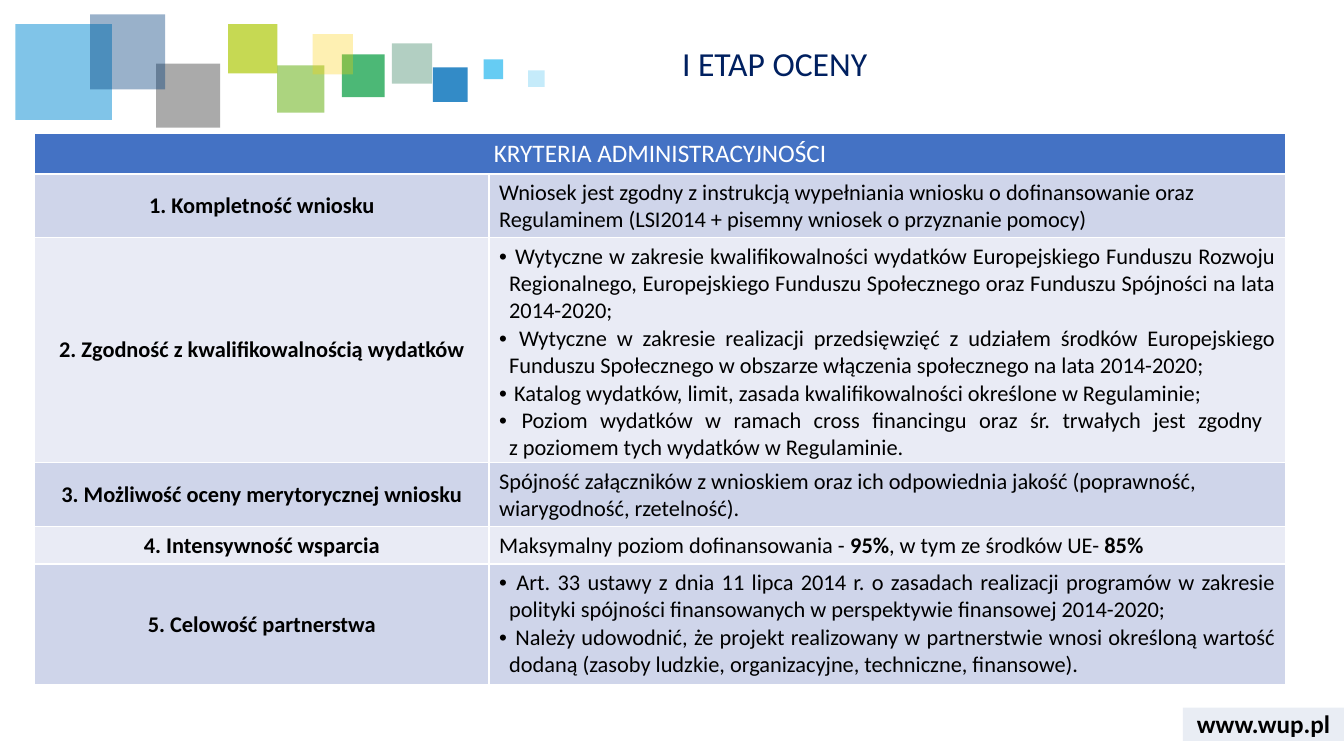
from lxml import etree
from pptx import Presentation
from pptx import util as u
from pptx.dml.color import RGBColor
from pptx.enum import shapes, text
from pptx.oxml import ns

WHITE = RGBColor(0xFF, 0xFF, 0xFF)
BLACK = RGBColor(0, 0, 0)
NAVY = RGBColor(0x00, 0x20, 0x60)
HEADER_BLUE = RGBColor(0x44, 0x72, 0xC4)
BANDS = [RGBColor(0xCF, 0xD5, 0xEA), RGBColor(0xE9, 0xEB, 0xF5)]
ADDRESS_BLUE = RGBColor(0x2F, 0x55, 0x97)
GREEN_DARK = RGBColor(0x00, 0x61, 0x38)
BLUE = RGBColor(0x00, 0x6E, 0xB9)
GREEN = RGBColor(0x00, 0x9A, 0x3C)
BLUE_BRIGHT = RGBColor(0x02, 0x8B, 0xD3)
GREEN_LIGHT = RGBColor(0x75, 0xB8, 0x2A)
GRAY = RGBColor(0x57, 0x57, 0x57)
BLUE_DARK = RGBColor(0x00, 0x3D, 0x7C)
SKY = RGBColor(0x40, 0xC0, 0xF1)
LIME = RGBColor(0xAF, 0xCA, 0x0B)
YELLOW = RGBColor(0xFE, 0xD0, 0x00)

presentation = Presentation()
presentation.slide_width = u.Pt(960)
presentation.slide_height = u.Pt(540)
slide = presentation.slides.add_slide(presentation.slide_layouts[5])


def add_tile(left, top, width, height, color, opacity):
    """Add a borderless rectangle with the given opacity in percent."""
    shape = slide.shapes.add_shape(shapes.MSO_SHAPE.RECTANGLE, u.Pt(left), u.Pt(top),
                                   u.Pt(width), u.Pt(height))
    shape.shadow.inherit = False
    shape.line.fill.background()
    shape.fill.solid()
    shape.fill.fore_color.rgb = color
    color_element = shape._element.spPr.find(".//" + ns.qn("a:srgbClr"))
    etree.SubElement(color_element, ns.qn("a:alpha"), val=str(opacity * 1000))


def format_runs(paragraph, size, color, bold=False):
    for run in paragraph.runs:
        run.font.name = "Calibri"
        run.font.size = u.Pt(size)
        run.font.color.rgb = color
        run.font.bold = bold


# Decorative squares: left, top, width, height, colour, opacity
tiles = [
    (280, 31, 28.8, 28.8, GREEN_DARK, 30),
    (309.3, 48.2, 24.7, 24.7, BLUE, 80),
    (244.3, 38.9, 30.5, 30.5, GREEN, 70),
    (11, 17.2, 69, 68.5, BLUE_BRIGHT, 50),
    (198, 46.8, 33.8, 33.8, GREEN_LIGHT, 60),
    (111.6, 45.4, 45.6, 45.8, GRAY, 50),
    (64.4, 10.2, 53.6, 53.6, BLUE_DARK, 40),
    (345.4, 42.4, 14, 14.2, SKY, 80),
    (163, 17.2, 35.2, 35.2, LIME, 70),
    (223.4, 24.4, 28.8, 28.8, YELLOW, 30),
    (377.3, 50.3, 11.8, 11.8, SKY, 30),
]
for tile in tiles:
    add_tile(*tile)

# Web address in the corner
add_tile(845, 505.4, 115, 23.8, ADDRESS_BLUE, 10)
address = slide.shapes.add_textbox(u.Pt(845), u.Pt(502), u.Pt(115), u.Pt(29))
address.text_frame.word_wrap = True
address.text_frame.vertical_anchor = text.MSO_ANCHOR.MIDDLE
address.text_frame.text = "www.wup.pl"
address_paragraph = address.text_frame.paragraphs[0]
address_paragraph.alignment = text.PP_ALIGN.CENTER
format_runs(address_paragraph, 18, BLACK, True)

# Title
title = slide.shapes.title
title.left, title.top, title.width, title.height = u.Pt(480), u.Pt(30.2), u.Pt(458), u.Pt(39.6)
title.text_frame.text = "I ETAP OCENY"
title.text_frame.vertical_anchor = text.MSO_ANCHOR.TOP
title_paragraph = title.text_frame.paragraphs[0]
title_paragraph.alignment = text.PP_ALIGN.LEFT
title_paragraph.line_spacing = 0.9
format_runs(title_paragraph, 24, NAVY)

# Criteria: name, row height, alignment, bulleted, paragraphs as lists of runs
# (every second run is bold)
LEFT, JUSTIFY = text.PP_ALIGN.LEFT, text.PP_ALIGN.JUSTIFY
criteria = [
    ("1. Kompletność wniosku", 45.6, LEFT, False, [
        ["Wniosek jest zgodny z instrukcją wypełniania wniosku o dofinansowanie "
         "oraz Regulaminem (LSI2014 + pisemny wniosek o przyznanie pomocy)"]]),
    ("2. Zgodność z kwalifikowalnością wydatków", 160.6, JUSTIFY, True, [
        [" Wytyczne w zakresie kwalifikowalności wydatków Europejskiego Funduszu Rozwoju "
         "Regionalnego, Europejskiego Funduszu Społecznego oraz Funduszu Spójności "
         "na lata 2014-2020;"],
        [" Wytyczne w zakresie realizacji przedsięwzięć z udziałem środków Europejskiego "
         "Funduszu Społecznego w obszarze włączenia społecznego na lata 2014-2020;"],
        [" Katalog wydatków, limit, zasada kwalifikowalności określone w Regulaminie;"],
        [" Poziom wydatków w ramach cross financingu oraz śr. trwałych jest zgodny "
         "\vz poziomem tych wydatków w Regulaminie."]]),
    ("3. Możliwość oceny merytorycznej wniosku", 45.6, LEFT, False, [
        ["Spójność załączników z wnioskiem oraz ich odpowiednia jakość "
         "(poprawność, wiarygodność, rzetelność)."]]),
    ("4. Intensywność wsparcia", 26.6, JUSTIFY, False, [
        ["Maksymalny poziom dofinansowania - ", "95%", ", w tym ze środków UE- ", "85%"]]),
    ("5. Celowość partnerstwa", 86.4, JUSTIFY, True, [
        [" Art. 33 ustawy z dnia 11 lipca 2014 r. o zasadach realizacji programów w zakresie "
         "polityki spójności finansowanych w perspektywie finansowej 2014-2020;"],
        [" Należy udowodnić, że projekt realizowany w partnerstwie wnosi określoną wartość "
         "dodaną (zasoby ludzkie, organizacyjne, techniczne, finansowe)."]]),
]

# Table with a merged header
table = slide.shapes.add_table(len(criteria) + 1, 2, u.Pt(24.8), u.Pt(95.4),
                               u.Pt(893.5), u.Pt(393.6)).table
table.columns[0].width, table.columns[1].width = u.Pt(324.5), u.Pt(569)
table.rows[0].height = u.Pt(28.8)
header = table.cell(0, 0)
header.merge(table.cell(0, 1))
header.text_frame.text = "KRYTERIA ADMINISTRACYJNOŚCI"
header.text_frame.paragraphs[0].alignment = text.PP_ALIGN.CENTER
format_runs(header.text_frame.paragraphs[0], 18, WHITE)
for cell in table.rows[0].cells:
    cell.fill.solid()
    cell.fill.fore_color.rgb = HEADER_BLUE

# Criterion rows
for index, (name, height, alignment, bulleted, paragraphs) in enumerate(criteria):
    row = table.rows[index + 1]
    row.height = u.Pt(height)
    for cell in row.cells:
        cell.fill.solid()
        cell.fill.fore_color.rgb = BANDS[index % 2]
    name_cell, detail_cell = row.cells
    name_cell.vertical_anchor = text.MSO_ANCHOR.MIDDLE
    name_cell.text_frame.text = name
    name_cell.text_frame.paragraphs[0].alignment = text.PP_ALIGN.CENTER
    format_runs(name_cell.text_frame.paragraphs[0], 16, BLACK, True)

    frame = detail_cell.text_frame
    for number, runs in enumerate(paragraphs):
        paragraph = frame.add_paragraph() if number else frame.paragraphs[0]
        paragraph.alignment = alignment
        if bulleted:
            properties = paragraph._p.get_or_add_pPr()
            properties.set("marL", str(u.Pt(7.2)))
            properties.set("indent", str(-u.Pt(7.2)))
            etree.SubElement(properties, ns.qn("a:buFont"), typeface="Arial")
            etree.SubElement(properties, ns.qn("a:buChar"), char="•")
        if len(runs) == 1:
            paragraph.text = runs[0]
        else:
            for run_text in runs:
                paragraph.add_run().text = run_text
        format_runs(paragraph, 16, BLACK)
        for run in paragraph.runs[1::2] if len(runs) > 1 else []:
            run.font.bold = True

presentation.save("out.pptx")
